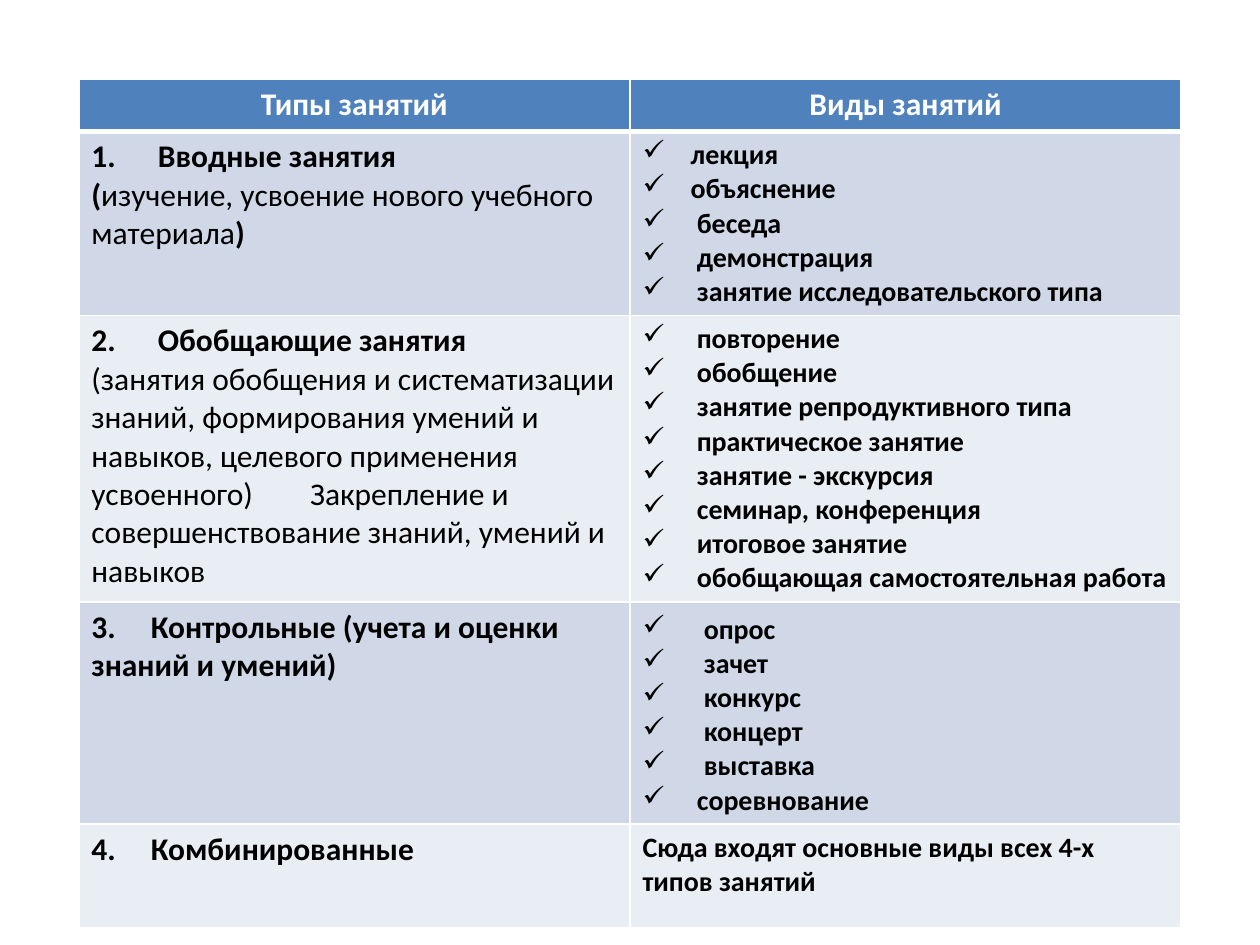
from lxml import etree
from pptx import Presentation
from pptx.dml.color import RGBColor
from pptx.enum.text import PP_ALIGN
from pptx.oxml.ns import qn
from pptx.util import Pt

CENTER = PP_ALIGN.CENTER
THEME = {
    "font": "Calibri",
    "large": 18,
    "small": 16,
    "header": "4F81BD",
    "bands": ["D0D8E8", "E9EDF4"],
    "light": "FFFFFF",
    "dark": "000000",
}
BLANK_LAYOUT = 6
COLUMN_WIDTH = 315
HEADINGS = ["Типы занятий", "Виды занятий"]
HEADER_HEIGHT = 30.2
CHECK_INDENT = 31

# Each lesson type: row height, tab stop after the number, title,
# description as (text, bold) runs, top margin of the right cell,
# and the kinds as (text, indent); an indent of 0 means no check mark.
LESSONS = [
    (105, 38, "1.\tВводные занятия",
     [("(", True), ("изучение, усвоение нового учебного материала", False), (")", True)],
     3.6,
     [("лекция", 27.5), ("объяснение", 27.5), ("беседа", CHECK_INDENT),
      ("демонстрация", CHECK_INDENT),
      ("занятие исследовательского типа", CHECK_INDENT)]),
    (163.5, 38, "2.\tОбобщающие занятия",
     [("(занятия обобщения и систематизации знаний, формирования умений и "
       "навыков, целевого применения усвоенного)\tЗакрепление и "
       "совершенствование знаний, умений и навыков", False)],
     3.6,
     [(kind, CHECK_INDENT) for kind in (
         "повторение", "обобщение", "занятие репродуктивного типа",
         "практическое занятие", "занятие - экскурсия", "семинар, конференция",
         "итоговое занятие", "обобщающая самостоятельная работа")]),
    (126.5, 34, "3.\tКонтрольные (учета и оценки знаний и умений)", [],
     6,
     [(kind, 35) for kind in ("опрос", "зачет", "конкурс", "концерт", "выставка")]
     + [("соревнование", CHECK_INDENT)]),
    (59, 34, "4.\tКомбинированные", [],
     3.6,
     [("Сюда входят основные виды всех 4-х типов занятий", 0)]),
]


def format_paragraph(paragraph, size, color, bold=None, tab=0, indent=0):
    """Set the check mark, tab stop and font of a paragraph."""
    properties = paragraph._p.get_or_add_pPr()
    if indent:
        properties.set("marL", str(Pt(indent)))
        properties.set("indent", str(-Pt(indent)))
        etree.SubElement(properties, qn("a:buChar"), char="✓")
    if tab:
        tabs = etree.SubElement(properties, qn("a:tabLst"))
        etree.SubElement(tabs, qn("a:tab"), pos=str(Pt(tab)), algn="l")
    paragraph.font.name = THEME["font"]
    paragraph.font.size = Pt(size)
    paragraph.font.color.rgb = RGBColor.from_string(color)
    if bold is not None:
        paragraph.font.bold = bold


def style_cell(cell, fill, bottom_width=1, top_width=1):
    """Give a cell white borders and a plain fill."""
    properties = cell._tc.get_or_add_tcPr()
    widths = {"a:lnL": 1, "a:lnR": 1, "a:lnT": top_width, "a:lnB": bottom_width}
    for tag, width in widths.items():
        line = etree.SubElement(properties, qn(tag), w=str(Pt(width)))
        line_fill = etree.SubElement(line, qn("a:solidFill"))
        etree.SubElement(line_fill, qn("a:srgbClr"), val=THEME["light"])
    cell.fill.solid()
    cell.fill.fore_color.rgb = RGBColor.from_string(fill)


presentation = Presentation()
presentation.slide_width = Pt(720)
presentation.slide_height = Pt(540)
slide = presentation.slides.add_slide(presentation.slide_layouts[BLANK_LAYOUT])

heights = [HEADER_HEIGHT] + [lesson[0] for lesson in LESSONS]
table = slide.shapes.add_table(
    len(heights), len(HEADINGS), Pt(45), Pt(45),
    Pt(COLUMN_WIDTH * len(HEADINGS)), Pt(sum(heights))).table
for column in table.columns:
    column.width = Pt(COLUMN_WIDTH)
for row, height in zip(table.rows, heights):
    row.height = Pt(height)

for column_index, heading in enumerate(HEADINGS):
    cell = table.cell(0, column_index)
    style_cell(cell, THEME["header"], bottom_width=3)
    paragraph = cell.text_frame.paragraphs[0]
    paragraph.text = heading
    paragraph.alignment = CENTER
    format_paragraph(paragraph, THEME["large"], THEME["light"], bold=True)

for row_index, lesson in enumerate(LESSONS, start=1):
    height, title_tab, title, description, top_margin, kinds = lesson
    type_cell, kinds_cell = table.cell(row_index, 0), table.cell(row_index, 1)
    for cell in (type_cell, kinds_cell):
        style_cell(cell, THEME["bands"][(row_index - 1) % 2],
                   top_width=3 if row_index == 1 else 1)

    paragraph = type_cell.text_frame.paragraphs[0]
    paragraph.text = title
    format_paragraph(paragraph, THEME["large"], THEME["dark"], bold=True, tab=title_tab)
    if description:
        paragraph = type_cell.text_frame.add_paragraph()
        format_paragraph(paragraph, THEME["large"], THEME["dark"], tab=125)
        for text, bold in description:
            run = paragraph.add_run()
            run.text = text
            run.font.bold = bold

    kinds_cell.margin_top = Pt(top_margin)
    for kind_index, (kind, indent) in enumerate(kinds):
        frame = kinds_cell.text_frame
        paragraph = frame.add_paragraph() if kind_index else frame.paragraphs[0]
        paragraph.text = kind
        format_paragraph(paragraph, THEME["small"], THEME["dark"], bold=True, indent=indent)

presentation.save("out.pptx")
